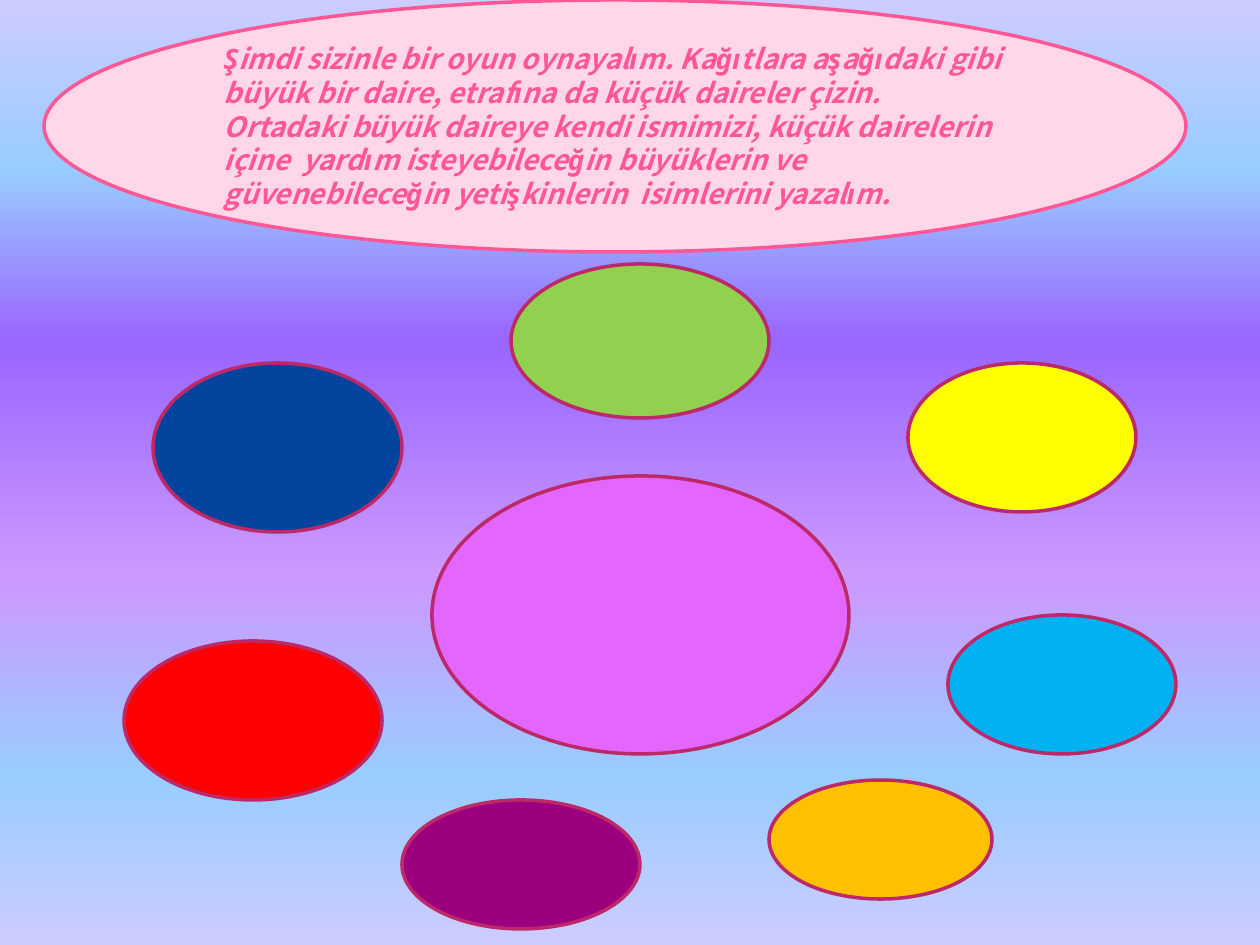
"""Build a game slide: an instruction bubble above a big circle ringed by small ones."""
import copy

import pptx
import pptx.dml.color
import pptx.enum.shapes
import pptx.enum.text
import pptx.oxml.ns
import pptx.util

PX = 914400 // 126


def rgb(value):
    return pptx.dml.color.RGBColor.from_string(value)


def add_ellipse(slide, box, fill, line):
    shape = slide.shapes.add_shape(
        pptx.enum.shapes.MSO_SHAPE.OVAL, *(length * PX for length in box))
    shape.shadow.inherit = False
    shape.fill.solid()
    shape.fill.fore_color.rgb = rgb(fill)
    shape.line.color.rgb = rgb(line)
    shape.line.width = pptx.util.Pt(2)
    return shape


presentation = pptx.Presentation()
presentation.slide_width = 1260 * PX
presentation.slide_height = 945 * PX
slide = presentation.slides.add_slide(presentation.slide_layouts[6])

gradient_colors = [
    (0, "CCCCFF"), (0.18, "99CCFF"), (0.36, "9966FF"),
    (0.61, "CC99FF"), (0.82, "99CCFF"), (1, "CCCCFF"),
]
background = slide.background.fill
background.gradient()
background.gradient_angle = 270
stop_list = slide.element.find(".//" + pptx.oxml.ns.qn("a:gsLst"))
while len(stop_list) < len(gradient_colors):
    stop_list.append(copy.deepcopy(stop_list[0]))
for stop, (position, color) in zip(background.gradient_stops, gradient_colors):
    stop.position = position
    stop.color.rgb = rgb(color)

bubble = add_ellipse(slide, (44, 0, 1142, 252), "FFD7E8", "FF5698")
text_frame = bubble.text_frame
text_frame.word_wrap = True
text_frame.vertical_anchor = pptx.enum.text.MSO_ANCHOR.MIDDLE
paragraph = text_frame.paragraphs[0]
paragraph.text = (
    "Şimdi sizinle bir oyun oynayalım. Kağıtlara aşağıdaki gibi büyük bir daire, "
    "etrafına da küçük daireler çizin. Ortadaki büyük daireye kendi ismimizi, "
    "küçük dairelerin içine  yardım isteyebileceğin büyüklerin ve "
    "güvenebileceğin yetişkinlerin  isimlerini yazalım."
)
paragraph.alignment = pptx.enum.text.PP_ALIGN.LEFT
paragraph.line_spacing = pptx.util.Pt(19.25)
paragraph.font.name = "Noto Sans CJK KR"
paragraph.font.size = pptx.util.Pt(16)
paragraph.font.bold = True
paragraph.font.italic = True
paragraph.font.color.rgb = rgb("FF5698")

circles = [
    ((432, 476, 417, 278), "E366FF"),
    ((153, 363, 249, 169), "00449E"),
    ((124, 641, 258, 159), "FF0000"),
    ((511, 264, 258, 154), "92D050"),
    ((908, 363, 228, 149), "FFFF00"),
    ((948, 615, 228, 139), "00B0F0"),
    ((769, 780, 223, 119), "FFC000"),
    ((402, 800, 238, 129), "9C007F"),
]
for box, fill in circles:
    add_ellipse(slide, box, fill, "BD2968")

presentation.save("out.pptx")
